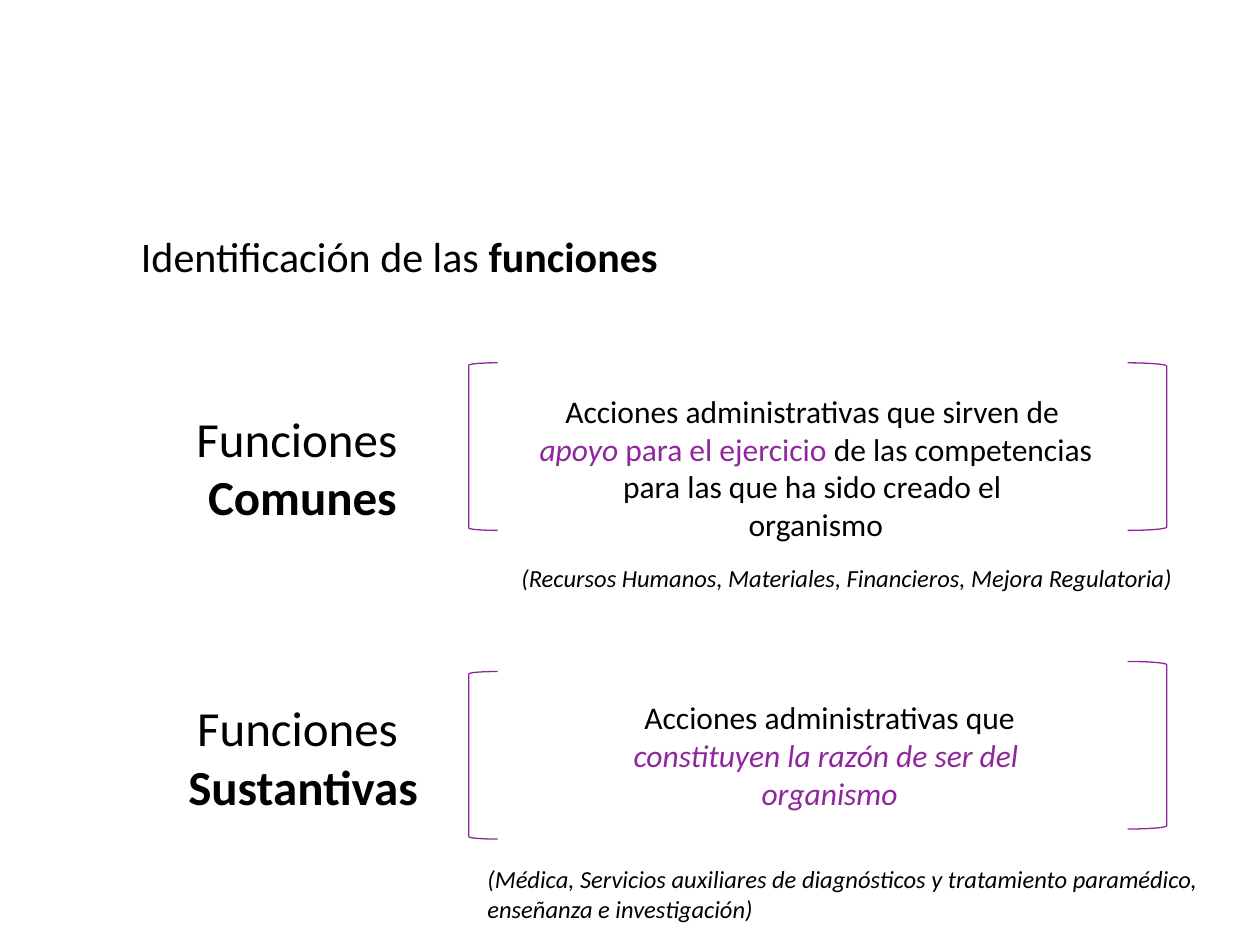
from pptx import Presentation
from pptx.dml.color import RGBColor
from pptx.enum.shapes import MSO_SHAPE as SHAPE
from pptx.enum.text import MSO_AUTO_SIZE as AUTO_SIZE, PP_ALIGN as ALIGN
from pptx.util import Inches, Pt

BLACK = RGBColor(0x00, 0x00, 0x00)
PURPLE = RGBColor(0x90, 0x26, 0x9E)

prs = Presentation()
prs.slide_width, prs.slide_height = Inches(10), Inches(7.5)
s = prs.slides.add_slide(prs.slide_layouts[6])


def add_text(box, size, align, lines):
    """Each line is a list of (text, style); style letters: b bold, i italic, p purple."""
    tb = s.shapes.add_textbox(*[Inches(v) for v in box])
    tf = tb.text_frame
    tf.word_wrap = False
    tf.auto_size = AUTO_SIZE.SHAPE_TO_FIT_TEXT
    for n, line in enumerate(lines):
        p = tf.add_paragraph() if n else tf.paragraphs[0]
        p.alignment = align
        for text, style in line:
            r = p.add_run()
            r.text = text
            r.font.name = "Calibri"
            r.font.size = Pt(size)
            r.font.bold = "b" in style
            r.font.italic = "i" in style
            r.font.color.rgb = PURPLE if "p" in style else BLACK


# Definitions
add_text((4.1, 3.06, 4.75, 1.31), 18, ALIGN.CENTER, [
    [("Acciones administrativas que sirven de ", "")],
    [("apoyo ", "ip"), ("para el ejercicio ", "p"), ("de las competencias", "")],
    [("para las que ha sido creado el ", "")],
    [("organismo", "")],
])
add_text((4.9, 5.49, 3.37, 1.01), 18, ALIGN.CENTER, [
    [("Acciones administrativas que", "")],
    [("constituyen la razón de ser del ", "ip")],
    [("organismo", "ip")],
])

# Heading and the two kinds of function
add_text((1.02, 1.78, 4.51, 0.5), 24, ALIGN.LEFT,
         [[("Identificación de las ", ""), ("funciones", "b")]])
for kind, box in (("Comunes", (1.42, 3.19, 1.96, 1.04)),
                  ("Sustantivas", (1.34, 5.49, 2.13, 1.04))):
    add_text(box, 28, ALIGN.CENTER, [[("Funciones ", "")], [(kind, "b")]])

# Brackets around the definitions
for shape, left, width, tops in ((SHAPE.LEFT_BRACKET, 3.72, 0.23, (2.88, 5.33)),
                                 (SHAPE.RIGHT_BRACKET, 8.95, 0.31, (2.88, 5.25))):
    for top in tops:
        sp = s.shapes.add_shape(shape, Inches(left), Inches(top), Inches(width), Inches(1.33))
        sp.shadow.inherit = False
        sp.fill.background()
        sp.line.color.rgb = PURPLE
        sp.line.width = Pt(0.75)

# Examples
add_text((4.04, 4.42, 5.4, 0.34), 14, ALIGN.LEFT,
         [[("(Recursos Humanos, Materiales, Financieros, Mejora Regulatoria)", "i")]])
add_text((3.77, 6.81, 5.96, 0.57), 14, ALIGN.LEFT, [
    [("(Médica, Servicios auxiliares de diagnósticos y tratamiento paramédico,", "i")],
    [("enseñanza e investigación)", "i")],
])

prs.save("out.pptx")
